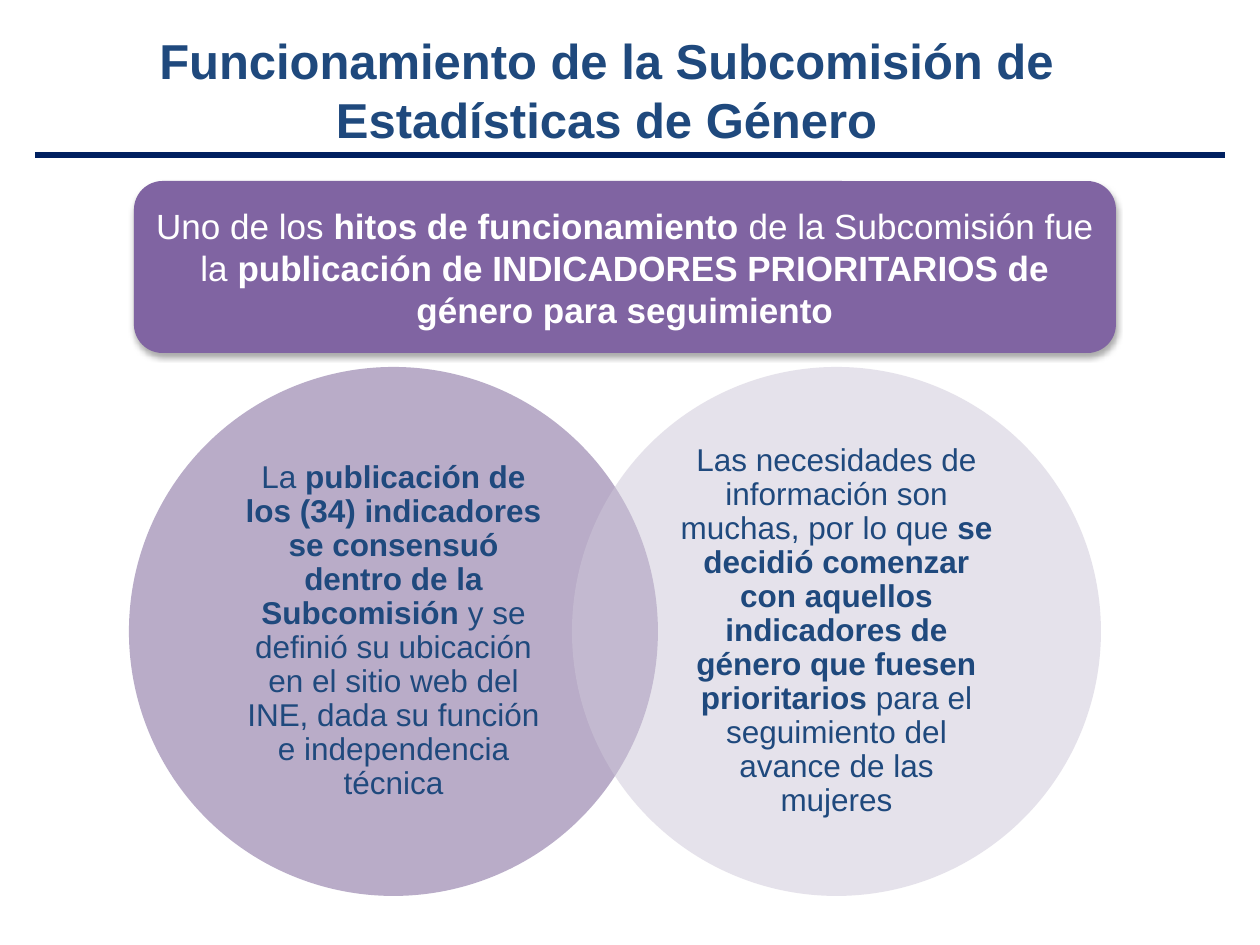
from lxml import etree
from pptx import Presentation
from pptx import util as u
from pptx.dml.color import RGBColor
from pptx.enum import shapes, text
from pptx.oxml import ns

PX = 914400 / 126
FONT = "Arial"
COLORS = {
    "navy": "1F497D",
    "rule": "002060",
    "banner": "8064A2",
    "left": "745B93",
    "right": "CDC7D8",
    "white": "FFFFFF",
    "shadow": "000000",
}

TITLE = "Funcionamiento de la Subcomisión de Estadísticas de Género"
# Each run is (wording, bold)
BANNER = [
    ("Uno de los ", False),
    ("hitos de funcionamiento ", True),
    ("de la Subcomisión fue la ", False),
    ("publicación de INDICADORES PRIORITARIOS de género para seguimiento", True),
]
# Each circle is (left edge, colour, runs)
CIRCLES = [
    (129, "left", [
        ("La ", False),
        ("publicación de los (34) indicadores se consensuó dentro de la Subcomisión ", True),
        ("y se definió su ubicación en el sitio web del INE, dada su función "
         "e independencia técnica", False),
    ]),
    (572, "right", [
        ("Las necesidades de información son muchas, por lo que ", False),
        ("se decidió comenzar con aquellos indicadores de género que fuesen prioritarios ", True),
        ("para el seguimiento del avance de las mujeres", False),
    ]),
]
CIRCLE_TOP, CIRCLE_SIZE = 367, 529
TEXT_INSET = 78


def px(*lengths):
    return [u.Emu(round(length * PX)) for length in lengths]


def rgb(name):
    return RGBColor.from_string(COLORS[name])


def write(box, runs, size, color, anchor=text.MSO_ANCHOR.MIDDLE):
    frame = box.text_frame
    frame.word_wrap = True
    frame.auto_size = text.MSO_AUTO_SIZE.NONE
    frame.vertical_anchor = anchor
    para = frame.paragraphs[0]
    para.alignment = text.PP_ALIGN.CENTER
    for wording, bold in runs:
        span = para.add_run()
        span.text = wording
        span.font.name = FONT
        span.font.size = u.Pt(size)
        span.font.bold = bold
        span.font.color.rgb = rgb(color)
    return frame


def add_title(page):
    title = page.shapes.title
    title.left, title.top, title.width, title.height = px(35, 24, 1143, 131)
    write(title, [(TITLE, True)], 28, "navy", text.MSO_ANCHOR.TOP)


def add_rule(page):
    rule = page.shapes.add_connector(shapes.MSO_CONNECTOR.STRAIGHT, *px(35, 155, 1225, 155))
    rule.line.color.rgb = rgb("rule")
    rule.line.width = u.Pt(3)
    etree.SubElement(rule._element.spPr, ns.qn("a:effectLst"))


def add_filled(page, kind, bounds, color):
    shape = page.shapes.add_shape(kind, *px(*bounds))
    shape.shadow.inherit = False
    shape.fill.solid()
    shape.fill.fore_color.rgb = rgb(color)
    shape.line.fill.background()
    return shape


def add_circle(page, left, color, runs):
    circle = add_filled(page, shapes.MSO_SHAPE.OVAL,
                        (left, CIRCLE_TOP, CIRCLE_SIZE, CIRCLE_SIZE), color)
    # Half transparent, so that the overlap shows
    fill_color = circle._element.spPr.find(".//" + ns.qn("a:srgbClr"))
    etree.SubElement(fill_color, ns.qn("a:alpha"), val="50000")

    side = CIRCLE_SIZE - 2 * TEXT_INSET
    box = page.shapes.add_textbox(*px(left + TEXT_INSET, CIRCLE_TOP + TEXT_INSET, side, side))
    frame = write(box, runs, 18, "navy")
    frame.margin_left = frame.margin_right = u.Inches(0.23)
    frame.margin_top = frame.margin_bottom = u.Inches(0.03)
    frame.paragraphs[0].line_spacing = 0.9


def add_banner(page):
    banner = add_filled(page, shapes.MSO_SHAPE.ROUNDED_RECTANGLE, (134, 181, 982, 172), "banner")
    write(banner, BANNER, 20, "white")
    # Soft shadow straight below
    effects = banner._element.spPr.find(ns.qn("a:effectLst"))
    shadow = etree.SubElement(effects, ns.qn("a:outerShdw"), blurRad=str(u.Pt(3.5)),
                              dist=str(u.Pt(2.2)), dir="5400000", rotWithShape="0")
    tint = etree.SubElement(shadow, ns.qn("a:srgbClr"), val=COLORS["shadow"])
    etree.SubElement(tint, ns.qn("a:alpha"), val="32000")


def main():
    deck = Presentation()
    deck.slide_width, deck.slide_height = px(1260, 945)
    page = deck.slides.add_slide(deck.slide_layouts[5])
    add_title(page)
    add_rule(page)
    for left, color, runs in CIRCLES:
        add_circle(page, left, color, runs)
    add_banner(page)
    deck.save("out.pptx")


if __name__ == "__main__":
    main()
